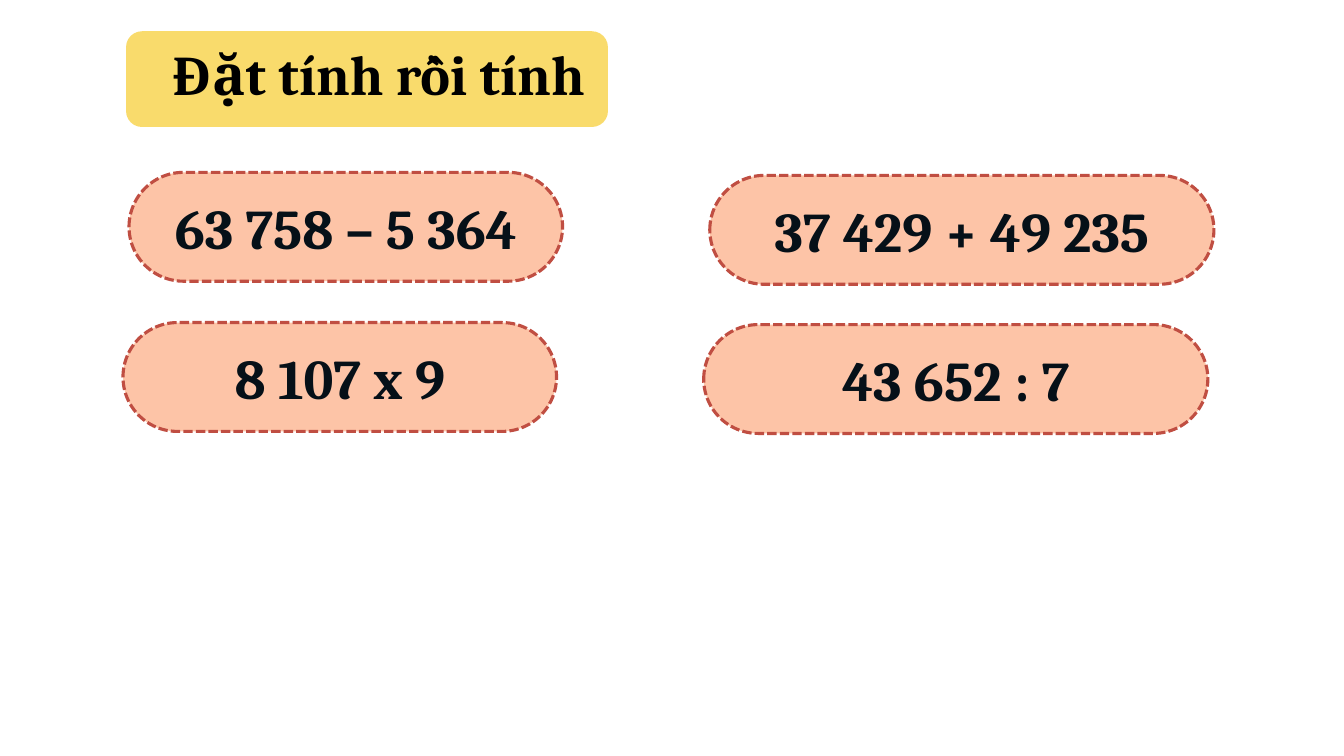
from dataclasses import dataclass
from typing import Any

import pptx
import pptx.dml.color
import pptx.enum.dml
import pptx.enum.shapes
import pptx.enum.text
import pptx.util

Inches = pptx.util.Inches

COLORS = {
    "title_fill": "F9DB6C",
    "title_text": "000000",
    "sum_fill": "FDC4A7",
    "sum_line": "C04E42",
    "sum_text": "061018",
}
TEXT_FORMAT = {"name": "Cambria", "size": pptx.util.Pt(40), "bold": True}
LINE_FORMAT = {
    "width": pptx.util.Pt(2.25),
    "dash_style": pptx.enum.dml.MSO_LINE.SQUARE_DOT,
}
SUM_HEIGHT = 1.08
TEXT_HEIGHT = 0.77
TEXT_INSET = 0.06
TEXT_DROP = 0.16


@dataclass
class Sum:
    text: str
    left: float
    top: float
    width: float


SUMS = [
    Sum("63 758 – 5 364", 1.28, 1.71, 4.3),
    Sum("37 429 + 49 235", 7.04, 1.74, 5),
    Sum("8 107 x 9", 1.22, 3.2, 4.3),
    Sum("43 652 : 7", 6.98, 3.22, 5),
]


def color(name: str) -> pptx.dml.color.RGBColor:
    return pptx.dml.color.RGBColor.from_string(COLORS[name])


def apply_format(target: Any, values: dict[str, Any]) -> None:
    for name, value in values.items():
        setattr(target, name, value)


def add_panel(group: Any, left: float, top: float, width: float,
              height: float, fill: str) -> Any:
    """Add a rounded panel without an outline."""
    panel = group.shapes.add_shape(
        pptx.enum.shapes.MSO_SHAPE.ROUNDED_RECTANGLE,
        Inches(left), Inches(top), Inches(width), Inches(height))
    panel.shadow.inherit = False
    panel.fill.solid()
    panel.fill.fore_color.rgb = color(fill)
    panel.line.fill.background()
    return panel


def add_label(group: Any, text: str, left: float, top: float,
              width: float, text_color: str) -> None:
    """Add one centred line of bold text."""
    box = group.shapes.add_textbox(
        Inches(left), Inches(top), Inches(width), Inches(TEXT_HEIGHT))
    box.text_frame.word_wrap = True
    para = box.text_frame.paragraphs[0]
    para.alignment = pptx.enum.text.PP_ALIGN.CENTER
    span = para.add_run()
    span.text = text
    apply_format(span.font, TEXT_FORMAT)
    span.font.color.rgb = color(text_color)


def add_title(page: Any) -> None:
    group = page.shapes.add_group_shape()
    add_panel(group, 1.25, 0.31, 4.78, 0.95, "title_fill")
    add_label(group, "Đặt tính rồi tính", 1.19, 0.34, 5.13, "title_text")


def add_sum(page: Any, item: Sum) -> None:
    group = page.shapes.add_group_shape()
    pill = add_panel(group, item.left, item.top, item.width, SUM_HEIGHT, "sum_fill")
    pill.adjustments[0] = 0.5
    pill.line.color.rgb = color("sum_line")
    apply_format(pill.line, LINE_FORMAT)
    add_label(group, item.text, item.left + TEXT_INSET, item.top + TEXT_DROP,
              item.width - 2 * TEXT_INSET, "sum_text")


def main() -> None:
    # Deck and blank page
    deck = pptx.Presentation()
    deck.slide_width = Inches(13.33)
    deck.slide_height = Inches(7.5)
    page = deck.slides.add_slide(deck.slide_layouts[6])

    # Title and the four sums
    add_title(page)
    for item in SUMS:
        add_sum(page, item)

    deck.save("out.pptx")


if __name__ == "__main__":
    main()
